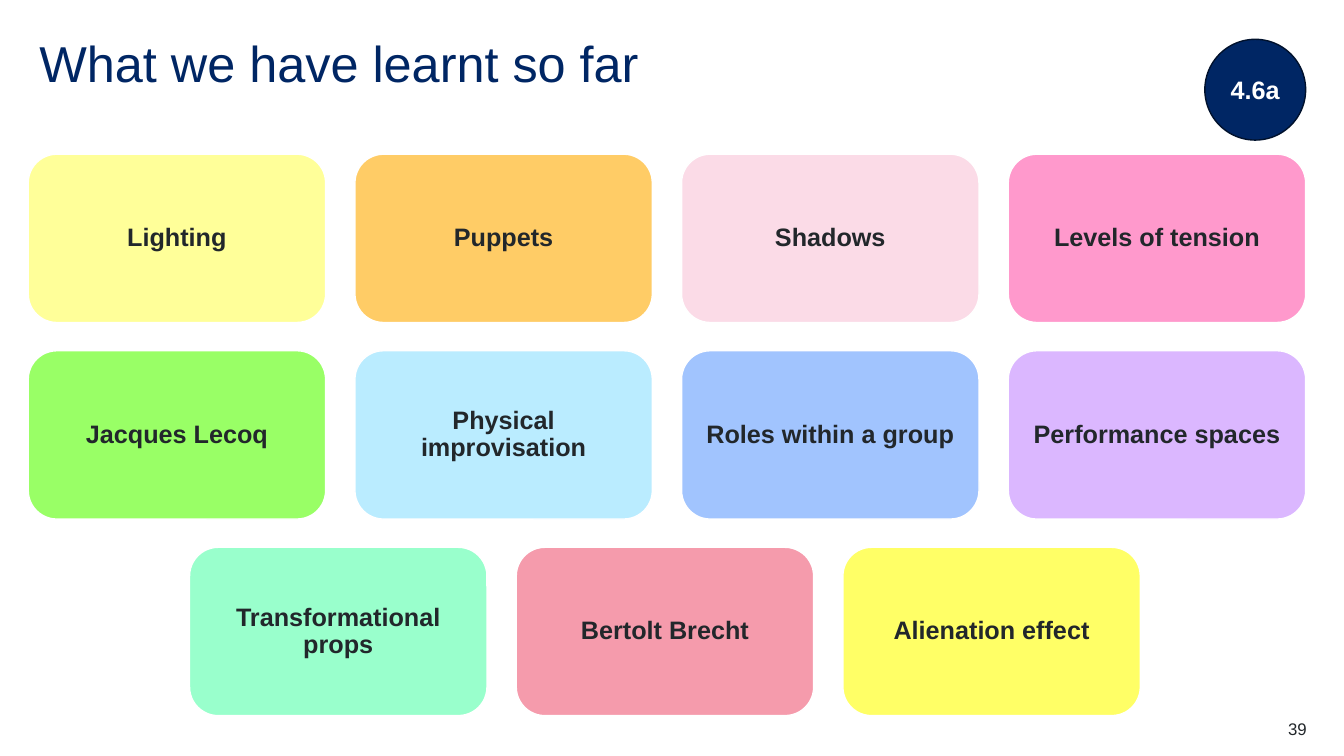
from pptx import Presentation
from pptx.dml.color import RGBColor
from pptx.enum.shapes import MSO_SHAPE
from pptx.enum.text import MSO_ANCHOR, MSO_AUTO_SIZE, PP_ALIGN
from pptx.util import Inches, Pt

NAVY = RGBColor(0x00, 0x26, 0x64)
DARK = RGBColor(0x00, 0x11, 0x2C)
INK = RGBColor(0x22, 0x27, 0x2B)
WHITE = RGBColor(0xFF, 0xFF, 0xFF)
LEMON = RGBColor(0xFF, 0xFF, 0x99)
ORANGE = RGBColor(0xFF, 0xCC, 0x66)
BLUSH = RGBColor(0xFB, 0xDB, 0xE7)
PINK = RGBColor(0xFF, 0x99, 0xCC)
GREEN = RGBColor(0x99, 0xFF, 0x66)
SKY = RGBColor(0xBA, 0xEC, 0xFF)
BLUE = RGBColor(0xA1, 0xC4, 0xFE)
LILAC = RGBColor(0xDB, 0xB7, 0xFF)
MINT = RGBColor(0x99, 0xFF, 0xCC)
ROSE = RGBColor(0xF5, 0x9B, 0xAC)
YELLOW = RGBColor(0xFF, 0xFF, 0x66)

CARD_W, CARD_H = 2.95, 1.67
STEP_X, STEP_Y = 3.24, 1.95
TOP = 1.53
ROWS = [
    (0.28, [("Lighting", LEMON), ("Puppets", ORANGE),
            ("Shadows", BLUSH), ("Levels of tension", PINK)]),
    (0.28, [("Jacques Lecoq", GREEN), ("Physical improvisation", SKY),
            ("Roles within a group", BLUE), ("Performance spaces", LILAC)]),
    (1.88, [("Transformational props", MINT), ("Bertolt Brecht", ROSE),
            ("Alienation effect", YELLOW)]),
]


def write(shape, text, size, color, bold=False, align=PP_ALIGN.CENTER,
          anchor=MSO_ANCHOR.MIDDLE, inset=0, spacing=1.0):
    """Put one formatted run of text into a shape."""
    frame = shape.text_frame
    frame.word_wrap = True
    frame.auto_size = MSO_AUTO_SIZE.NONE
    frame.vertical_anchor = anchor
    frame.margin_left = frame.margin_right = Inches(inset)
    frame.margin_top = frame.margin_bottom = Inches(inset)
    para = frame.paragraphs[0]
    para.alignment = align
    para.line_spacing = spacing
    run = para.add_run()
    run.text = text
    run.font.name = "Arial"
    run.font.size = Pt(size)
    run.font.bold = bold
    run.font.color.rgb = color


def add_title(slide, text):
    """Place and format the title placeholder."""
    title = slide.shapes.title
    title.left, title.top = Inches(0.39), Inches(0.39)
    title.width, title.height = Inches(12.56), Inches(0.6)
    write(title, text, 36, NAVY, align=PP_ALIGN.LEFT,
          anchor=MSO_ANCHOR.TOP, spacing=0.9)


def add_solid(slide, kind, left, top, width, height, fill, line):
    """Draw a flat shape with a thin outline."""
    shape = slide.shapes.add_shape(
        kind, Inches(left), Inches(top), Inches(width), Inches(height))
    shape.shadow.inherit = False
    shape.fill.solid()
    shape.fill.fore_color.rgb = fill
    shape.line.color.rgb = line
    shape.line.width = Pt(1)
    return shape


def add_badge(slide, text):
    """Draw the round lesson badge."""
    badge = add_solid(slide, MSO_SHAPE.OVAL, 11.95, 0.39, 1, 1, NAVY, DARK)
    write(badge, text, 18, WHITE, bold=True)


def add_card(slide, left, top, text, fill):
    """Draw one rounded topic card."""
    card = add_solid(slide, MSO_SHAPE.ROUNDED_RECTANGLE, left, top,
                     CARD_W, CARD_H, fill, WHITE)
    card.adjustments[0] = 0.17
    write(card, text, 18, INK, bold=True, inset=0.08, spacing=0.9)


def add_number(slide, text):
    """Write the page number at the bottom right."""
    box = slide.shapes.add_textbox(
        Inches(12.17), Inches(7.13), Inches(0.79), Inches(0.2))
    write(box, text, 12, INK, align=PP_ALIGN.RIGHT, anchor=MSO_ANCHOR.TOP)


def main():
    """Build and save the slide."""
    deck = Presentation()
    deck.slide_width, deck.slide_height = Inches(13.33), Inches(7.5)
    slide = deck.slides.add_slide(deck.slide_layouts[5])
    add_title(slide, "What we have learnt so far")
    add_badge(slide, "4.6a")
    for row, (left, cards) in enumerate(ROWS):
        for col, (text, fill) in enumerate(cards):
            add_card(slide, left + col * STEP_X, TOP + row * STEP_Y, text, fill)
    add_number(slide, "39")
    deck.save("out.pptx")


if __name__ == "__main__":
    main()
